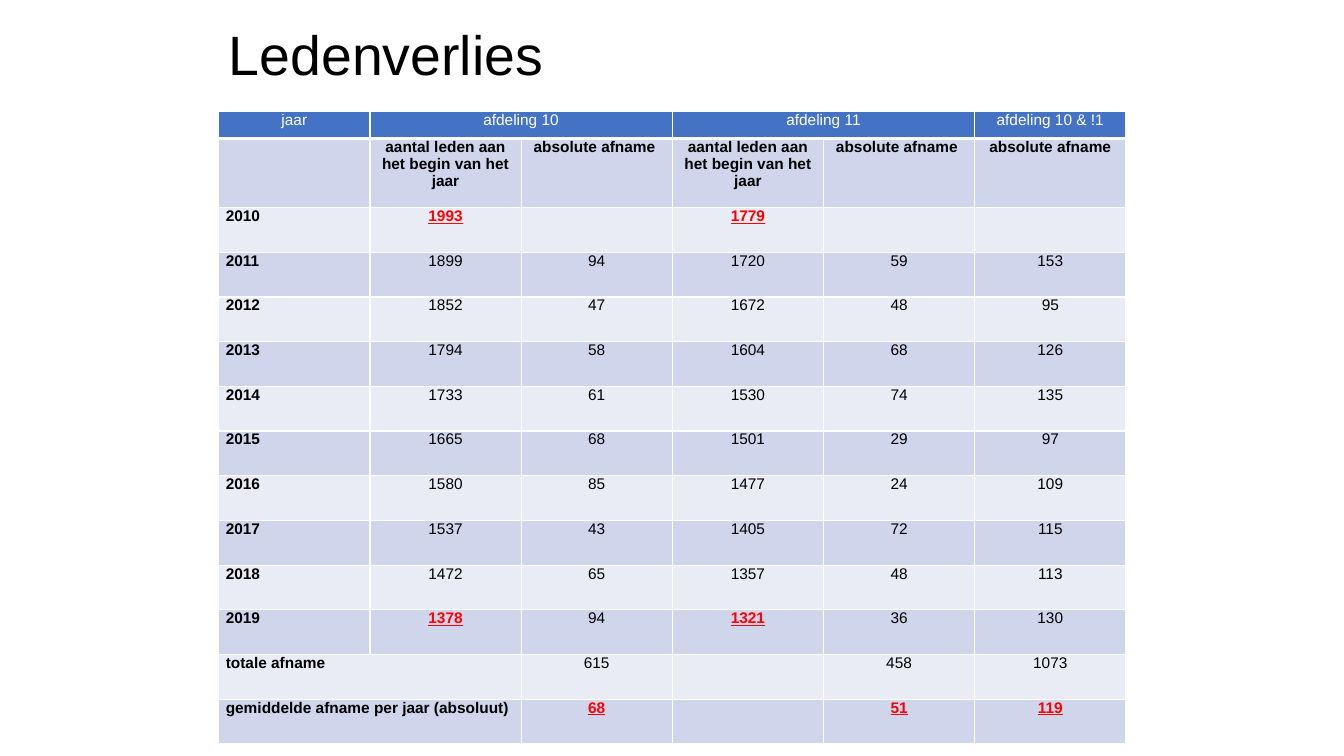
from dataclasses import dataclass

from lxml.etree import SubElement
from pptx import Presentation
from pptx.dml.color import RGBColor
from pptx.enum.text import MSO_ANCHOR, MSO_AUTO_SIZE, PP_ALIGN
from pptx.oxml.ns import qn
from pptx.table import _Cell as TableCell
from pptx.text.text import TextFrame
from pptx.util import Emu, Pt

PX = 3048  # EMU per px, 300 px to the inch
FONT = "Arial"
BLACK = RGBColor(0x00, 0x00, 0x00)
WHITE = RGBColor(0xFF, 0xFF, 0xFF)
RED = RGBColor(0xFF, 0x00, 0x00)
HEADER_BLUE = RGBColor(0x44, 0x72, 0xC4)
BAND_DARK = RGBColor(0xCF, 0xD5, 0xEA)
BAND_LIGHT = RGBColor(0xE9, 0xEB, 0xF5)

TABLE_LEFT, TABLE_TOP = 651, 332
COLUMN_WIDTH = 450
HEADER_HEIGHT, SUBHEADER_HEIGHT, ROW_HEIGHT = 80, 206, 133
CELL_INSET = 21


@dataclass(frozen=True)
class Row:
    """One table row; None continues the cell to its left."""
    texts: tuple[str | None, ...]
    red_columns: tuple[int, ...] = ()
    height: int = ROW_HEIGHT


MEMBERS = "aantal leden aan het begin van het jaar"
LOSS = "absolute afname"
ROWS = [
    Row(("jaar", "afdeling 10", None, "afdeling 11", None, "afdeling 10 & !1"),
        height=HEADER_HEIGHT),
    Row(("", MEMBERS, LOSS + " ", MEMBERS, LOSS + " ", LOSS), height=SUBHEADER_HEIGHT),
    Row(("2010", "1993", "", "1779", "", ""), red_columns=(1, 3)),
    Row(("2011", "1899", "94", "1720", "59", "153")),
    Row(("2012", "1852", "47", "1672", "48", "95")),
    Row(("2013", "1794", "58", "1604", "68", "126")),
    Row(("2014", "1733", "61", "1530", "74", "135")),
    Row(("2015", "1665", "68", "1501", "29", "97")),
    Row(("2016", "1580", "85", "1477", "24", "109")),
    Row(("2017", "1537", "43", "1405", "72", "115")),
    Row(("2018", "1472", "65", "1357", "48", "113")),
    Row(("2019", "1378", "94", "1321", "36", "130"), red_columns=(1, 3)),
    Row(("totale afname", None, "615", "", "458", "1073")),
    Row(("gemiddelde afname per jaar (absoluut)", None, "68", "", "51", "119"),
        red_columns=(2, 4, 5)),
]


def px(n: int) -> Emu:
    return Emu(n * PX)


def write(tf: TextFrame, text: str, *, size: float, color: RGBColor = BLACK,
          bold: bool = False, underline: bool = False,
          align: PP_ALIGN = PP_ALIGN.LEFT, spacing: float = 1.0) -> None:
    p = tf.paragraphs[0]
    p.alignment = align
    p.line_spacing = spacing
    r = p.add_run()
    r.text = text
    r.font.name = FONT
    r.font.size = Pt(size)
    r.font.bold = bold
    r.font.underline = underline
    r.font.color.rgb = color


def add_borders(cell: TableCell, bottom: int = 1) -> None:
    """Draw white borders, 1 pt except for the bottom one; call before filling."""
    tc_pr = cell._tc.get_or_add_tcPr()
    for side, width in (("L", 1), ("R", 1), ("T", 1), ("B", bottom)):
        ln = SubElement(tc_pr, qn(f"a:ln{side}"), w=str(Pt(width)))
        fill = SubElement(ln, qn("a:solidFill"))
        SubElement(fill, qn("a:srgbClr"), val=str(WHITE))


def format_cell(cell: TableCell, row: int, col: int) -> None:
    is_header = row == 0
    add_borders(cell, bottom=3 if is_header else 1)
    cell.fill.solid()
    band = BAND_DARK if row % 2 else BAND_LIGHT
    cell.fill.fore_color.rgb = HEADER_BLUE if is_header else band
    cell.margin_left = cell.margin_right = px(CELL_INSET)
    cell.margin_top = cell.margin_bottom = 0

    text = ROWS[row].texts[col]
    if not text:
        return
    is_red = col in ROWS[row].red_columns
    is_label = col == 0 and not is_header
    write(cell.text_frame, text, size=11,
          color=WHITE if is_header else RED if is_red else BLACK,
          bold=is_label or is_red or row == 1, underline=is_red,
          align=PP_ALIGN.LEFT if is_label else PP_ALIGN.CENTER)


def main() -> None:
    prs = Presentation()
    prs.slide_width, prs.slide_height = px(4000), px(2250)
    s = prs.slides.add_slide(prs.slide_layouts[5])

    title = s.shapes.title
    title.left, title.top, title.width, title.height = px(651), px(90), px(2700), px(165)
    tf = title.text_frame
    tf.auto_size = MSO_AUTO_SIZE.NONE
    tf.vertical_anchor = MSO_ANCHOR.MIDDLE
    write(tf, "Ledenverlies", size=39.6, spacing=0.9)

    n_cols = len(ROWS[0].texts)
    table = s.shapes.add_table(
        len(ROWS), n_cols, px(TABLE_LEFT), px(TABLE_TOP),
        px(COLUMN_WIDTH * n_cols), px(sum(row.height for row in ROWS))).table
    for column in table.columns:
        column.width = px(COLUMN_WIDTH)
    for i, row in enumerate(ROWS):
        table.rows[i].height = px(row.height)
        for j, text in enumerate(row.texts):
            format_cell(table.cell(i, j), i, j)
            if text is None:
                table.cell(i, j - 1).merge(table.cell(i, j))

    prs.save("out.pptx")


if __name__ == "__main__":
    main()
